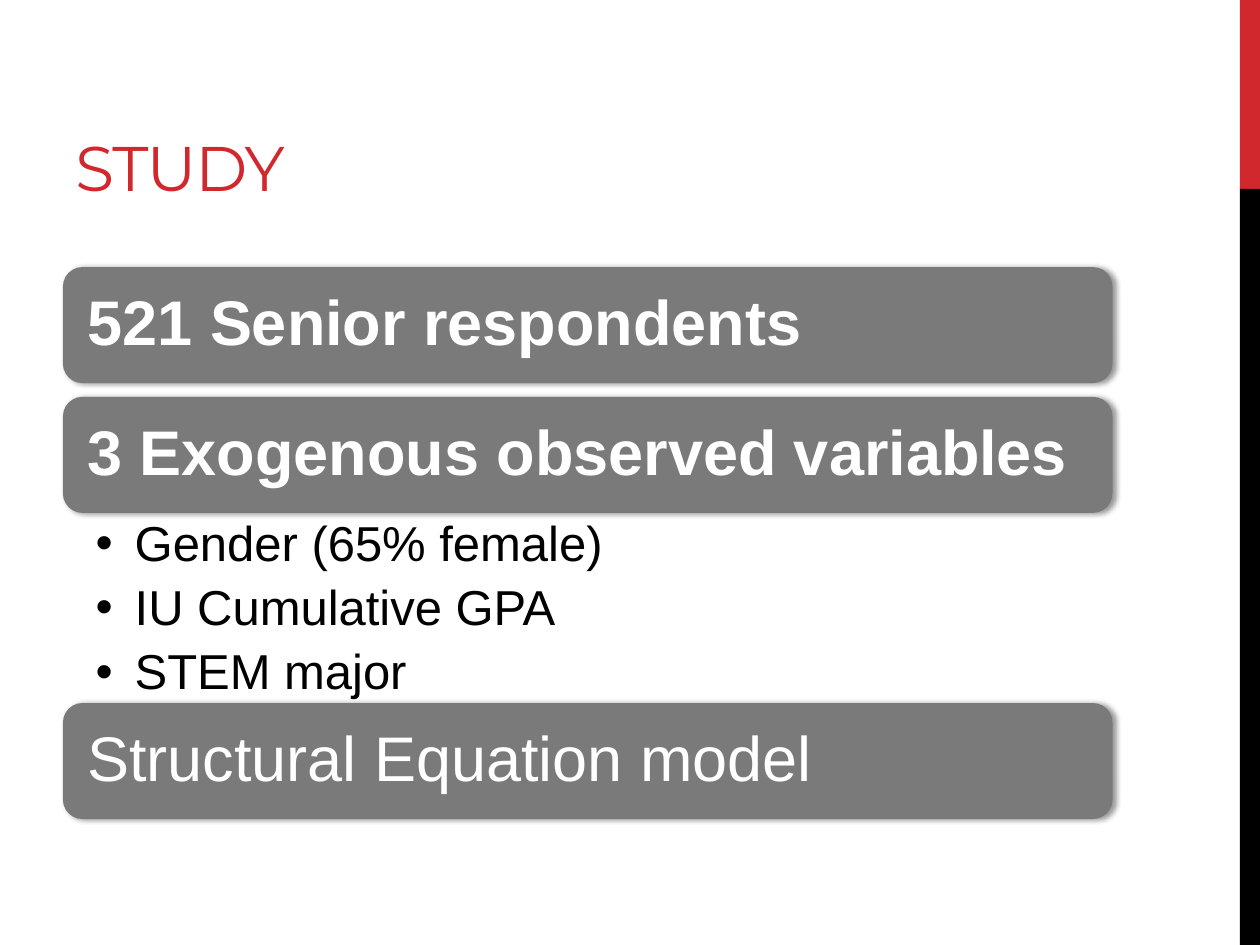
"""Build the Study slide: a title, three grey bars, a bullet list and a side stripe."""
from lxml import etree
from pptx import Presentation
from pptx.dml.color import RGBColor
from pptx.enum.shapes import MSO_SHAPE
from pptx.enum.text import MSO_ANCHOR, PP_ALIGN
from pptx.oxml import parse_xml
from pptx.util import Inches, Pt

RECTANGLE, ROUNDED = MSO_SHAPE.RECTANGLE, MSO_SHAPE.ROUNDED_RECTANGLE
TOP, MIDDLE, BOTTOM = MSO_ANCHOR.TOP, MSO_ANCHOR.MIDDLE, MSO_ANCHOR.BOTTOM
LEFT = PP_ALIGN.LEFT
DRAWING = "http://schemas.openxmlformats.org/drawingml/2006/main"
COLORS = {"red": "D1282E", "black": "000000", "grey": "7A7A7A", "white": "FFFFFF"}
SHADOW = (
    f'<a:effectLst xmlns:a="{DRAWING}"><a:outerShdw blurRad="{Pt(3.1)}" dist="{Pt(1.8)}" dir="0">'
    f'<a:srgbClr val="{COLORS["black"]}"><a:alpha val="40000"/></a:srgbClr>'
    "</a:outerShdw></a:effectLst>"
)

deck = Presentation()
deck.slide_width, deck.slide_height = Inches(10), Inches(7.5)
page = deck.slides.add_slide(deck.slide_layouts[6])

margin, content_width, bar_height = Inches(0.5), Inches(8.33), Inches(0.92)
stripe_width = Inches(0.16)
stripe_left = deck.slide_width - stripe_width
stripe_split = deck.slide_height // 5


def add_block(kind, left, top, width, height, color):
    block = page.shapes.add_shape(kind, left, top, width, height)
    block.shadow.inherit = False
    block.fill.solid()
    block.fill.fore_color.rgb = RGBColor.from_string(COLORS[color])
    block.line.fill.background()
    return block


def write(box, lines, anchor, insets, color, font, paragraph):
    frame = box.text_frame
    frame.word_wrap = True
    frame.vertical_anchor = anchor
    sides = ("margin_left", "margin_top", "margin_right", "margin_bottom")
    for side, inset in zip(sides, insets):
        setattr(frame, side, Inches(inset))
    frame.text = "\n".join(lines)
    for para in frame.paragraphs:
        for name, value in paragraph.items():
            setattr(para, name, value)
        for span in para.runs:
            for name, value in font.items():
                setattr(span.font, name, value)
            span.font.color.rgb = RGBColor.from_string(COLORS[color])
    return frame.paragraphs


add_block(RECTANGLE, stripe_left, 0, stripe_width, stripe_split, "red")
add_block(RECTANGLE, stripe_left, stripe_split, stripe_width,
          deck.slide_height - stripe_split, "black")

title = page.shapes.add_textbox(margin, Inches(0.17), Inches(6.33), Inches(1.5))
title_paras = write(title, ["STUDY"], BOTTOM, (0.1, 0.05, 0.1, 0.05), "red",
                    {"name": "Montserrat", "size": Pt(36)}, {"alignment": LEFT})
title_paras[0].runs[0].font._element.set("spc", "-60")

bars = [
    ("521 Senior respondents", 2.12, True),
    ("3 Exogenous observed variables", 3.15, True),
    ("Structural Equation model", 5.58, False),
]
for wording, top, bold in bars:
    bar = add_block(ROUNDED, margin, Inches(top), content_width, bar_height, "grey")
    bar._element.spPr.remove(bar._element.spPr.find(f"{{{DRAWING}}}effectLst"))
    bar._element.spPr.append(parse_xml(SHADOW))
    write(bar, [wording], MIDDLE, (0.15, 0.15, 0.15, 0.15), "white",
          {"name": "Arial", "size": Pt(36), "bold": bold},
          {"alignment": LEFT, "line_spacing": 0.9})

variables = page.shapes.add_textbox(margin, Inches(4.07), content_width, Inches(1.51))
variable_paras = write(
    variables, ["Gender (65% female)", "IU Cumulative GPA", "STEM major"],
    TOP, (0.26, 0.05, 0.28, 0.05), "black", {"name": "Arial", "size": Pt(28)},
    {"alignment": LEFT, "line_spacing": 0.9, "space_after": Pt(6.5)})
for para in variable_paras:
    settings = para._element.get_or_add_pPr()
    settings.set("marL", str(Inches(0.31)))
    settings.set("indent", str(-Inches(0.31)))
    etree.SubElement(settings, f"{{{DRAWING}}}buFont", typeface="Arial")
    etree.SubElement(settings, f"{{{DRAWING}}}buChar", char="•")

deck.save("out.pptx")
